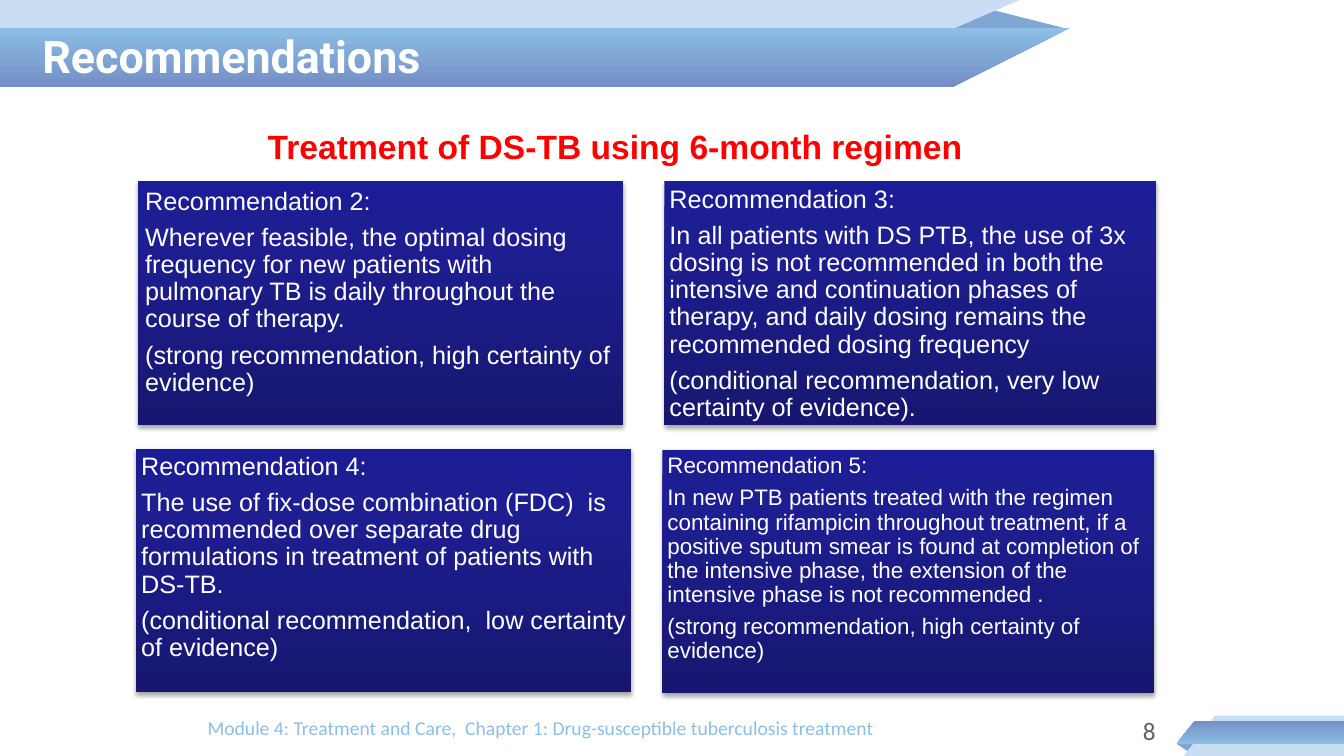
import copy

import pptx
import pptx.util
import pptx.dml.color
import pptx.enum.shapes
import pptx.enum.text
import pptx.oxml
import pptx.oxml.ns

Inches, Pt = pptx.util.Inches, pptx.util.Pt
RGB = pptx.dml.color.RGBColor
ALIGN = pptx.enum.text.PP_ALIGN
ANCHOR = pptx.enum.text.MSO_ANCHOR

WHITE = RGB(0xFF, 0xFF, 0xFF)
RED = RGB(0xFF, 0x00, 0x00)
GREY = RGB(0x60, 0x60, 0x60)
PALE = RGB(0xC9, 0xDD, 0xF3)
SKY = RGB(0x8D, 0xBE, 0xE6)
MID = RGB(0x80, 0xA6, 0xD5)
DUSK = RGB(0x73, 0x8E, 0xC5)

# Gradients run from top to bottom
BANNER_FILL = [(0, SKY), (0.5, MID), (1, DUSK)]
CORNER_FILL = [(0, DUSK), (0.5, MID), (1, SKY)]
CARD_FILL = [(0, RGB(0x1C, 0x1C, 0x96)), (0.2, RGB(0x1E, 0x1E, 0x93)),
             (1, RGB(0x17, 0x17, 0x71))]

# Content
TITLE = "Recommendations"
SUBTITLE = "Treatment of DS-TB using 6-month regimen"
FOOTER = "Module 4: Treatment and Care,  Chapter 1: Drug-susceptible tuberculosis treatment"
PAGE = "8"
CARD_HEIGHT = 2.42
# (left, top, width), inset, text size, paragraphs
CARDS = [
    ((1.37, 1.8, 4.81), 0.07, 18, [
        "Recommendation 2:",
        "Wherever feasible, the optimal dosing frequency for new patients with "
        "pulmonary TB is daily throughout the course of therapy.",
        "(strong recommendation, high certainty of evidence)"]),
    ((6.59, 1.8, 4.88), 0.05, 18, [
        "Recommendation 3:",
        "In all patients with DS PTB, the use of 3x dosing is not recommended in both "
        "the intensive and continuation phases of therapy, and daily dosing remains "
        "the recommended dosing frequency",
        "(conditional recommendation, very low certainty of evidence)."]),
    ((1.35, 4.45, 4.91), 0.05, 18, [
        "Recommendation 4:",
        "The use of fix-dose combination (FDC)  is recommended over separate drug "
        "formulations in treatment of patients with DS-TB.",
        "(conditional recommendation,  low certainty of evidence)"]),
    ((6.57, 4.46, 4.88), 0.05, 16, [
        "Recommendation 5:",
        "In new PTB patients treated with the regimen containing rifampicin throughout "
        "treatment, if a positive sputum smear is found at completion of the intensive "
        "phase, the extension of the intensive phase is not recommended .",
        "(strong recommendation, high certainty of evidence)"]),
]
# Ribbon outlines, back to front: fill, corner points
RIBBONS = [
    (MID, [(9.43, 0.29), (9.81, 0.09), (10.6, 0.29)]),
    (PALE, [(0, 0), (10.11, 0), (8.14, 0.86), (0, 0.86)]),
    (BANNER_FILL, [(0, 0.28), (10.61, 0.28), (9.45, 0.86), (0, 0.86)]),
    (MID, [(11.67, 7.38), (11.85, 7.38), (11.79, 7.46)]),
    (PALE, [(12.05, 7.1), (13.33, 7.1), (13.33, 7.5), (11.74, 7.5)]),
    (CORNER_FILL, [(11.85, 7.15), (13.33, 7.15), (13.33, 7.38), (11.67, 7.38)]),
]
SHADOW = (
    '<a:outerShdw xmlns:a="http://schemas.openxmlformats.org/drawingml/2006/main" '
    'blurRad="39370" dist="22860" dir="5400000" rotWithShape="0">'
    '<a:srgbClr val="000000"><a:alpha val="35000"/></a:srgbClr></a:outerShdw>')


def paint(shape, fill):
    """Fill with one colour or a list of gradient stops; no line, no shadow."""
    shape.shadow.inherit = False
    shape.line.fill.background()
    if isinstance(fill, RGB):
        shape.fill.solid()
        shape.fill.fore_color.rgb = fill
        return
    shape.fill.gradient()
    shape.fill.gradient_angle = 270
    stops = shape._element.spPr.find(".//" + pptx.oxml.ns.qn("a:gsLst"))
    stops.append(copy.deepcopy(stops[0]))
    for stop, (position, color) in zip(shape.fill.gradient_stops, fill):
        stop.color.rgb = color
        stop.position = position


def style(paragraph, font, size, color, bold=False, align=ALIGN.LEFT):
    paragraph.alignment = align
    for run in paragraph.runs:
        run.font.name, run.font.size, run.font.bold = font, Pt(size), bold
        run.font.color.rgb = color


def add_label(slide, box, text, *look, **options):
    label = slide.shapes.add_textbox(*map(Inches, box))
    label.text_frame.word_wrap = True
    label.text_frame.text = text
    style(label.text_frame.paragraphs[0], *look, **options)


def add_card(slide, place, inset, size, texts):
    card = slide.shapes.add_shape(pptx.enum.shapes.MSO_SHAPE.RECTANGLE,
                                  *map(Inches, (*place, CARD_HEIGHT)))
    paint(card, CARD_FILL)
    effects = card._element.spPr.find(pptx.oxml.ns.qn("a:effectLst"))
    effects.append(pptx.oxml.parse_xml(SHADOW))
    frame = card.text_frame
    frame.word_wrap = True
    frame.vertical_anchor = ANCHOR.TOP
    frame.margin_left = frame.margin_right = Inches(inset)
    frame.margin_top = frame.margin_bottom = Inches(inset)
    frame.text = "\n".join(texts)
    for paragraph in frame.paragraphs:
        paragraph.line_spacing = 0.9
        paragraph.space_after = Pt(0.35 * size)
        style(paragraph, "Arial", size, WHITE)


def main():
    deck = pptx.Presentation()
    deck.slide_width, deck.slide_height = Inches(13.33), Inches(7.5)
    slide = deck.slides.add_slide(deck.slide_layouts.get_by_name("Title Only"))

    # Ribbons at the top and in the lower right corner
    for fill, points in RIBBONS:
        start, *others = [(Inches(x), Inches(y)) for x, y in points]
        outline = slide.shapes.build_freeform(*start)
        outline.add_line_segments(others, close=True)
        paint(outline.convert_to_shape(), fill)

    # Title, brought in front of the ribbons
    title = slide.shapes.title
    title.left, title.top, title.width, title.height = map(Inches, (0.32, 0.11, 8.02, 0.89))
    title.text_frame.text = TITLE
    title.text_frame.auto_size = pptx.enum.text.MSO_AUTO_SIZE.NONE
    title.text_frame.vertical_anchor = ANCHOR.MIDDLE
    style(title.text_frame.paragraphs[0], "Roboto", 32, WHITE, bold=True)
    slide.shapes._spTree.append(title._element)

    # Subtitle and recommendation cards
    add_label(slide, (0.64, 1.2, 10.92, 0.46), SUBTITLE, "Arial", 24, RED,
              bold=True, align=ALIGN.CENTER)
    for card in CARDS:
        add_card(slide, *card)

    # Footer and page number
    add_label(slide, (1.96, 7.05, 8.02, 0.4), FOOTER, "Calibri", 14, SKY)
    add_label(slide, (10.13, 7.05, 1.43, 0.4), PAGE, "Calibri", 18, GREY, align=ALIGN.RIGHT)

    deck.save("out.pptx")


if __name__ == "__main__":
    main()
